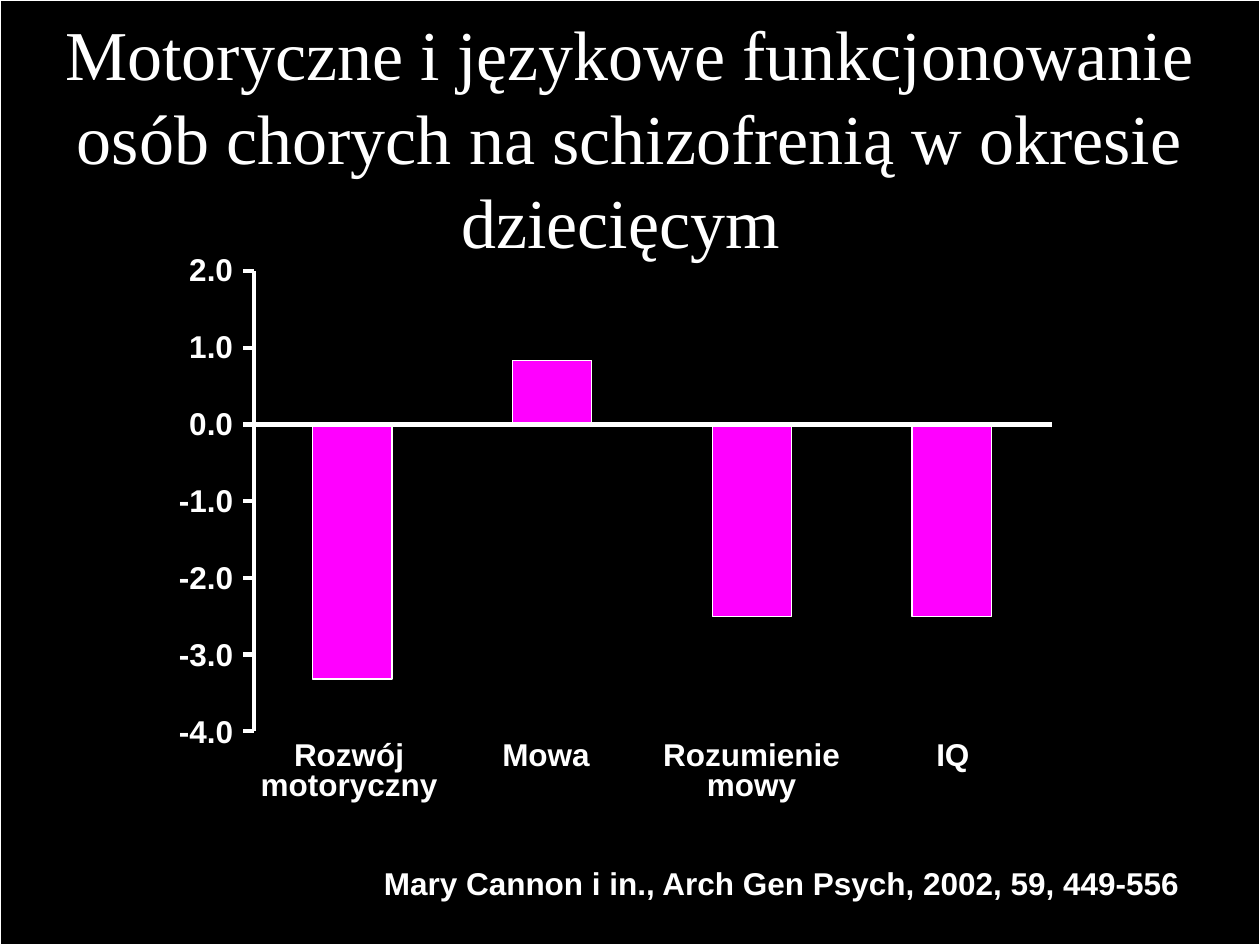
"""Build a slide charting childhood motor and language functioning in schizophrenia."""
import lxml.etree
import pptx
import pptx.dml.color
import pptx.enum.shapes
import pptx.enum.text
import pptx.oxml.ns
import pptx.util

Pt = pptx.util.Pt
Align = pptx.enum.text.PP_ALIGN
Anchor = pptx.enum.text.MSO_ANCHOR
AutoSize = pptx.enum.text.MSO_AUTO_SIZE

TITLE = "Motoryczne i językowe funkcjonowanie osób chorych na schizofrenią w okresie dziecięcym "
CITATION = "Mary Cannon i in., Arch Gen Psych, 2002, 59, 449-556"
RESULTS = [
    ("Rozwój motoryczny", -3.32, 42.5),
    ("Mowa ", 0.84, 24.5),
    ("Rozumienie mowy", -2.5, 42.5),
    ("IQ", -2.5, 24.5),
]
SCALE = [2, 1, 0, -1, -2, -3, -4]


def rgb(code):
    return pptx.dml.color.RGBColor.from_string(code)


THEME = {
    "ground": rgb("000000"),
    "ink": rgb("FFFFFF"),
    "bar": rgb("FF00FF"),
    "title_font": "Times New Roman",
    "label_font": "Arial",
    "title_size": Pt(40),
    "label_size": Pt(18),
}
SLIDE_WIDTH, SLIDE_HEIGHT = 720, 540
AXIS_X, AXIS_END, TICK_START = 145, 601.2, 139
ZERO_Y, UNIT = 242.64, 43.8
BAR_LEFT, BAR_STEP, BAR_WIDTH = 178.6, 114.2, 45.4
CATEGORY_LEFT, CATEGORY_STEP, CATEGORY_WIDTH, CATEGORY_TOP = 130.4, 115, 138.2, 420.5
SCALE_RIGHT, SCALE_TOP, SCALE_STEP = 133.2, 147, 44


def write(box, text, *, align, font="label_font", size="label_size", bold=True,
          spacing=None, wrap=True, anchor=Anchor.TOP, inset=(7.2, 3.6),
          fit=AutoSize.SHAPE_TO_FIT_TEXT):
    frame = box.text_frame
    frame.auto_size = fit
    frame.word_wrap = wrap
    frame.vertical_anchor = anchor
    frame.margin_left = frame.margin_right = Pt(inset[0])
    frame.margin_top = frame.margin_bottom = Pt(inset[1])
    paragraph = frame.paragraphs[0]
    paragraph.alignment = align
    if spacing:
        paragraph.line_spacing = spacing
    run = paragraph.add_run()
    run.text = text
    run.font.name = THEME[font]
    run.font.size = THEME[size]
    run.font.bold = bold
    run.font.color.rgb = THEME["ink"]


def add_rectangle(slide, left, top, width, height, fill, line_width):
    rectangle = slide.shapes.add_shape(
        pptx.enum.shapes.MSO_SHAPE.RECTANGLE, Pt(left), Pt(top), Pt(width), Pt(height))
    rectangle.shadow.inherit = False
    rectangle.fill.solid()
    rectangle.fill.fore_color.rgb = THEME[fill]
    rectangle.line.color.rgb = THEME["ink"]
    rectangle.line.width = Pt(line_width)
    return rectangle


def add_line(slide, x1, y1, x2, y2):
    line = slide.shapes.add_connector(
        pptx.enum.shapes.MSO_CONNECTOR.STRAIGHT, Pt(x1), Pt(y1), Pt(x2), Pt(y2))
    line.line.color.rgb = THEME["ink"]
    line.line.width = Pt(2.5)
    lxml.etree.SubElement(line._element.spPr, pptx.oxml.ns.qn("a:effectLst"))


def add_label(slide, text, left, top, width, height, **style):
    box = slide.shapes.add_textbox(Pt(left), Pt(top), Pt(width), Pt(height))
    write(box, text, **style)


def add_heading(slide):
    backdrop = add_rectangle(slide, 0, 0, SLIDE_WIDTH, SLIDE_HEIGHT, "ground", 1)
    slide.shapes._spTree.insert(2, backdrop._element)
    title = slide.shapes.title
    title.left, title.top, title.width, title.height = Pt(0), Pt(33), Pt(719.3), Pt(90)
    write(title, TITLE, align=Align.CENTER, font="title_font", size="title_size",
          bold=False, anchor=Anchor.MIDDLE, fit=AutoSize.NONE)
    add_label(slide, CITATION, 208, 490.3, 473, 29, align=Align.RIGHT, wrap=False)


def add_bars(slide):
    for index, (_, score, _) in enumerate(RESULTS):
        add_rectangle(slide, BAR_LEFT + index * BAR_STEP, ZERO_Y - max(score, 0) * UNIT,
                      BAR_WIDTH, abs(score) * UNIT, "bar", 0.75)


def add_axes(slide):
    add_line(slide, AXIS_X, ZERO_Y - SCALE[0] * UNIT, AXIS_X, ZERO_Y - SCALE[-1] * UNIT)
    for value in SCALE:
        tick_y = ZERO_Y - value * UNIT
        add_line(slide, TICK_START, tick_y, AXIS_X, tick_y)
    add_line(slide, AXIS_X, ZERO_Y, AXIS_END, ZERO_Y)


def add_axis_labels(slide):
    for index, value in enumerate(SCALE):
        width = 31 if value < 0 else 25
        add_label(slide, f"{value:.1f}", SCALE_RIGHT - width, SCALE_TOP + index * SCALE_STEP,
                  width, 17.3, align=Align.RIGHT, spacing=0.8, wrap=False, inset=(0, 0))
    for index, (category, _, height) in enumerate(RESULTS):
        add_label(slide, category, CATEGORY_LEFT + index * CATEGORY_STEP, CATEGORY_TOP,
                  CATEGORY_WIDTH, height, align=Align.CENTER, spacing=0.8)


def main():
    deck = pptx.Presentation()
    deck.slide_width, deck.slide_height = Pt(SLIDE_WIDTH), Pt(SLIDE_HEIGHT)
    slide = deck.slides.add_slide(deck.slide_layouts[5])
    slide.background.fill.solid()
    slide.background.fill.fore_color.rgb = THEME["ground"]
    add_heading(slide)
    add_bars(slide)
    add_axes(slide)
    add_axis_labels(slide)
    deck.save("out.pptx")


if __name__ == "__main__":
    main()
